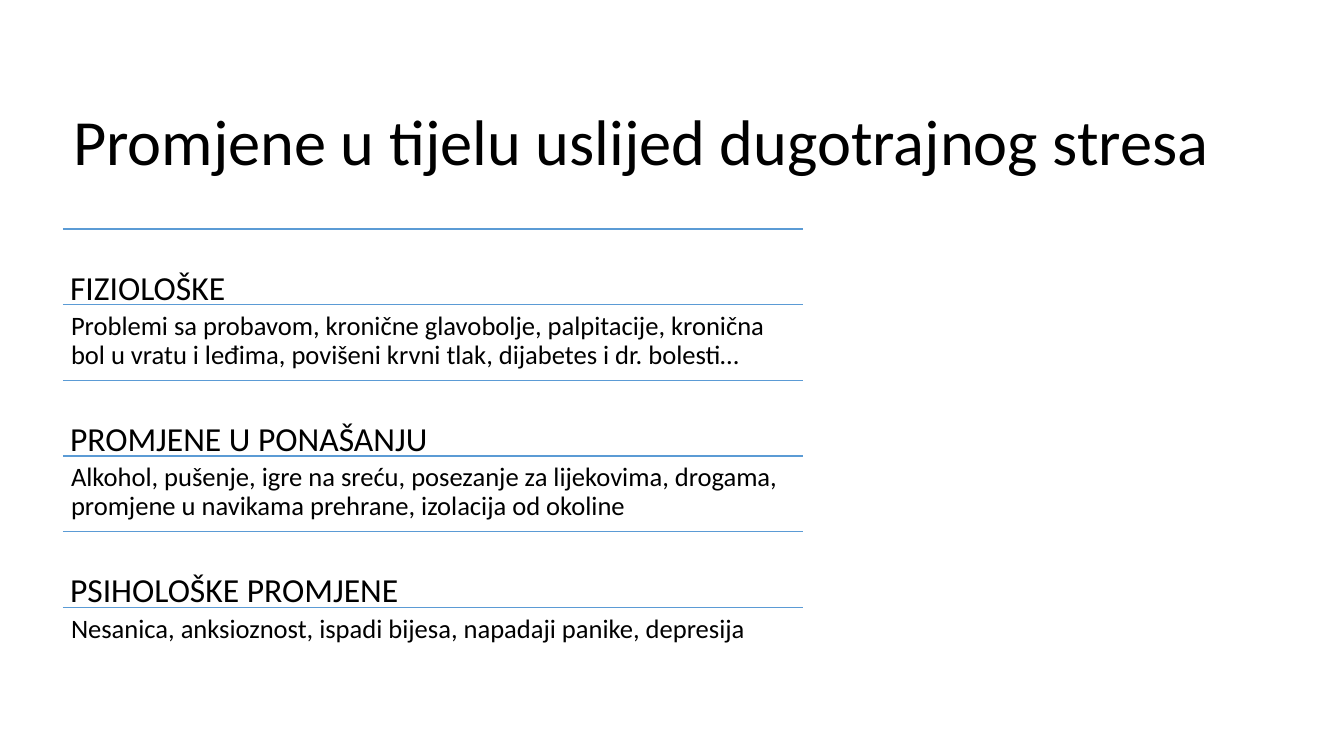
import pptx
import pptx.dml.color
import pptx.enum.text
import pptx.util
from lxml import etree

TITLE = "Promjene u tijelu uslijed dugotrajnog stresa"
CHANGES = [
    ("FIZIOLOŠKE",
     "Problemi sa probavom, kronične glavobolje, palpitacije, kronična "
     "bol u vratu i leđima, povišeni krvni tlak, dijabetes i dr. bolesti…"),
    ("PROMJENE U PONAŠANJU",
     "Alkohol, pušenje, igre na sreću, posezanje za lijekovima, drogama, "
     "promjene u navikama prehrane, izolacija od okoline"),
    ("PSIHOLOŠKE PROMJENE",
     "Nesanica, anksioznost, ispadi bijesa, napadaji panike, depresija"),
]

THEME = {
    "font": "Calibri",
    "text": pptx.dml.color.RGBColor.from_string("000000"),
    "rule": pptx.dml.color.RGBColor.from_string("5B9BD5"),
    "title": 46,
    "heading": 24,
    "body": 19,
    "rule_width": 1,
}
SLIDE = (1344, 756)
TITLE_BOX = (63, 26, 1215, 158)
LIST_BOX = (63, 229, 740, 454)
INSETS = {
    "heading": {"margin_left": 7, "margin_top": 42, "margin_right": 7, "margin_bottom": 0},
    "body": {"margin_left": 8, "margin_top": 8, "margin_right": 8, "margin_bottom": 8},
}
A_NS = "http://schemas.openxmlformats.org/drawingml/2006/main"


def px(n):
    return pptx.util.Emu(round(n * 914400 / 100.8))


def set_all(obj, values):
    for name, value in values.items():
        setattr(obj, name, value)


def write(tf, text, role, anchor):
    set_all(tf, {"word_wrap": True, "vertical_anchor": anchor,
                 "auto_size": pptx.enum.text.MSO_AUTO_SIZE.NONE})
    p = tf.paragraphs[0]
    set_all(p, {"alignment": pptx.enum.text.PP_ALIGN.LEFT, "line_spacing": 0.9})
    r = p.add_run()
    r.text = text
    set_all(r.font, {"name": THEME["font"], "size": pptx.util.Pt(THEME[role])})
    r.font.color.rgb = THEME["text"]


def add_rule(s, x, y, w):
    line = s.shapes.add_connector(pptx.enum.shapes.MSO_CONNECTOR.STRAIGHT,
                                  px(x), px(y), px(x + w), px(y))
    line.line.color.rgb = THEME["rule"]
    line.line.width = pptx.util.Pt(THEME["rule_width"])
    etree.SubElement(line._element.spPr, f"{{{A_NS}}}effectLst")


def add_row(s, text, role, x, y, w, h):
    add_rule(s, x, y, w)
    tf = s.shapes.add_textbox(px(x), px(y), px(w), px(h)).text_frame
    set_all(tf, {name: px(n) for name, n in INSETS[role].items()})
    write(tf, text, role, pptx.enum.text.MSO_ANCHOR.TOP)


def main():
    prs = pptx.Presentation()
    prs.slide_width, prs.slide_height = map(px, SLIDE)
    s = prs.slides.add_slide(prs.slide_layouts[5])

    sp = s.shapes.title
    set_all(sp, dict(zip(("left", "top", "width", "height"), map(px, TITLE_BOX))))
    write(sp.text_frame, TITLE, "title", pptx.enum.text.MSO_ANCHOR.BOTTOM)

    rows = [row for heading, body in CHANGES
            for row in ((heading, "heading"), (body, "body"))]
    x, top, w, total = LIST_BOX
    h = total / len(rows)
    for i, (text, role) in enumerate(rows):
        add_row(s, text, role, x, top + i * h, w, h)

    prs.save("out.pptx")


if __name__ == "__main__":
    main()
